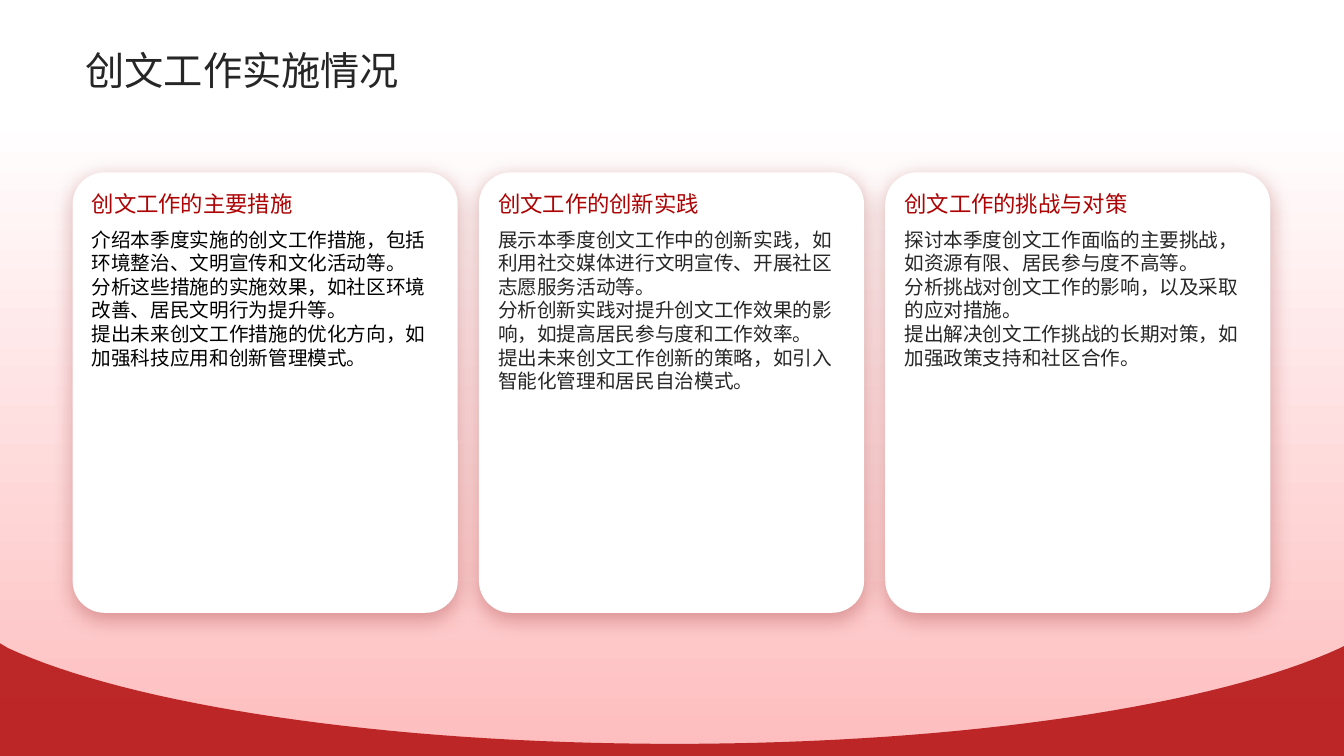
from lxml.etree import SubElement
from pptx import Presentation
from pptx.dml.color import RGBColor
from pptx.enum.shapes import MSO_SHAPE as Preset
from pptx.enum.text import MSO_ANCHOR as Anchor, MSO_AUTO_SIZE as AutoSize, PP_ALIGN as Align
from pptx.oxml.ns import qn
from pptx.util import Inches, Pt

WIDTH, HEIGHT = 13.33, 7.5
CARD_LEFT, CARD_TOP, CARD_WIDTH, CARD_HEIGHT, CARD_STEP = 0.72, 1.71, 3.82, 4.37, 4.03
PADDING, TEXT_WIDTH = 0.19, 3.44

MEASURES = [
    "介绍本季度实施的创文工作措施，包括环境整治、文明宣传和文化活动等。",
    "分析这些措施的实施效果，如社区环境改善、居民文明行为提升等。",
    "提出未来创文工作措施的优化方向，如加强科技应用和创新管理模式。",
]
INNOVATIONS = [
    "展示本季度创文工作中的创新实践，如利用社交媒体进行文明宣传、开展社区志愿服务活动等。",
    "分析创新实践对提升创文工作效果的影响，如提高居民参与度和工作效率。",
    "提出未来创文工作创新的策略，如引入智能化管理和居民自治模式。",
]
CHALLENGES = [
    "探讨本季度创文工作面临的主要挑战，如资源有限、居民参与度不高等。",
    "分析挑战对创文工作的影响，以及采取的应对措施。",
    "提出解决创文工作挑战的长期对策，如加强政策支持和社区合作。",
]
CARDS = [
    ("创文工作的主要措施", MEASURES, "000000"),
    ("创文工作的创新实践", INNOVATIONS, "262626"),
    ("创文工作的挑战与对策", CHALLENGES, "262626"),
]


def color(code):
    return RGBColor.from_string(code)


def curve(start, first, second, end, steps=32):
    for step in range(1, steps + 1):
        t = step / steps
        u = 1 - t
        weights = (u**3, 3 * u * u * t, 3 * u * t * t, t**3)
        points = (start, first, second, end)
        yield tuple(sum(w * p[axis] for w, p in zip(weights, points)) for axis in (0, 1))


class SlideBuilder:
    """Draws styled elements on the current slide."""

    font = "Noto Sans CJK SC"
    red, ink, white, pink, shade = "AD0304", "262626", "FFFFFF", "FEBDBE", "820203"

    def __init__(self, deck):
        self.slide = deck.slides.add_slide(deck.slide_layouts[5])
        self.shapes = self.slide.shapes

    def place(self, shape, left, top, width, height):
        shape.left, shape.top = Inches(left), Inches(top)
        shape.width, shape.height = Inches(width), Inches(height)

    def set_text(self, shape, lines, size, code, anchor=Anchor.TOP):
        frame = shape.text_frame
        frame.text = "\n".join(lines)
        frame.word_wrap = True
        frame.auto_size = AutoSize.NONE
        frame.vertical_anchor = anchor
        frame.margin_left = frame.margin_right = frame.margin_top = frame.margin_bottom = 0
        for paragraph in frame.paragraphs:
            paragraph.alignment = Align.LEFT
            for run in paragraph.runs:
                run.font.size = Pt(size)
                run.font.name = self.font
                run.font.color.rgb = color(code)
                SubElement(run.font._element, qn("a:ea"), typeface=self.font)

    def title(self, text, left, top, width, height):
        heading = self.shapes.title
        self.place(heading, left, top, width, height)
        self.set_text(heading, [text], 28, self.ink, Anchor.MIDDLE)
        self.shapes._spTree.append(heading._element)

    def text(self, lines, left, top, width, height, size, code):
        box = self.shapes.add_textbox(Inches(left), Inches(top), Inches(width), Inches(height))
        self.set_text(box, lines, size, code)

    def panel(self, preset, left, top, width, height):
        shape = self.shapes.add_shape(
            preset, Inches(left), Inches(top), Inches(width), Inches(height)
        )
        shape.line.fill.background()
        shape.shadow.inherit = False
        return shape

    def backdrop(self):
        fill = self.panel(Preset.RECTANGLE, 0, 0, WIDTH, HEIGHT).fill
        fill.gradient()
        fill.gradient_angle = 90
        for stop, position, code in zip(fill.gradient_stops, (0, 0.85), (self.pink, self.white)):
            stop.position = position
            stop.color.rgb = color(code)

    def wave(self):
        left, middle, right = (0.08, 6.43), (6.69, 7.38), (13.29, 6.43)
        rim = [left, *curve(left, (1.29, 6.99), (3.79, 7.38), middle)]
        rim += curve(middle, (9.58, 7.38), (12.08, 6.99), right)
        rim += [(13.37, 6.39), (13.37, 7.5), (-0.02, 7.5)]
        builder = self.shapes.build_freeform(Inches(-0.02), Inches(6.37))
        builder.add_line_segments([(Inches(x), Inches(y)) for x, y in rim])
        shape = builder.convert_to_shape()
        shape.fill.solid()
        shape.fill.fore_color.rgb = color(self.red)
        shape.line.fill.background()
        shape.shadow.inherit = False
        tint = shape._element.spPr.find(f"{qn('a:solidFill')}/{qn('a:srgbClr')}")
        SubElement(tint, qn("a:alpha"), val="81000")

    def card(self, left, heading, points, code):
        shape = self.panel(Preset.ROUNDED_RECTANGLE, left, CARD_TOP, CARD_WIDTH, CARD_HEIGHT)
        shape.adjustments[0] = 0.083
        shape.fill.solid()
        shape.fill.fore_color.rgb = color(self.white)
        self.drop_shadow(shape)
        inner = left + PADDING
        self.text([heading], inner, 1.89, TEXT_WIDTH, 0.36, 16, self.red)
        self.text(points, inner, 2.26, TEXT_WIDTH, 3.65, 14, code)

    def drop_shadow(self, shape):
        effects = shape._element.spPr.find(qn("a:effectLst"))
        shadow = SubElement(
            effects, qn("a:outerShdw"), blurRad=str(Pt(15)), dist=str(Pt(4)),
            dir="5400000", algn="t", rotWithShape="0",
        )
        tint = SubElement(shadow, qn("a:srgbClr"), val=self.shade)
        SubElement(tint, qn("a:alpha"), val="30000")


def main():
    deck = Presentation()
    deck.slide_width, deck.slide_height = Inches(WIDTH), Inches(HEIGHT)
    builder = SlideBuilder(deck)
    builder.backdrop()
    builder.wave()
    for index, (heading, points, code) in enumerate(CARDS):
        builder.card(CARD_LEFT + index * CARD_STEP, heading, points, code)
    builder.title("创文工作实施情况", 0.85, 0.44, 11.67, 0.51)
    deck.save("out.pptx")


if __name__ == "__main__":
    main()
